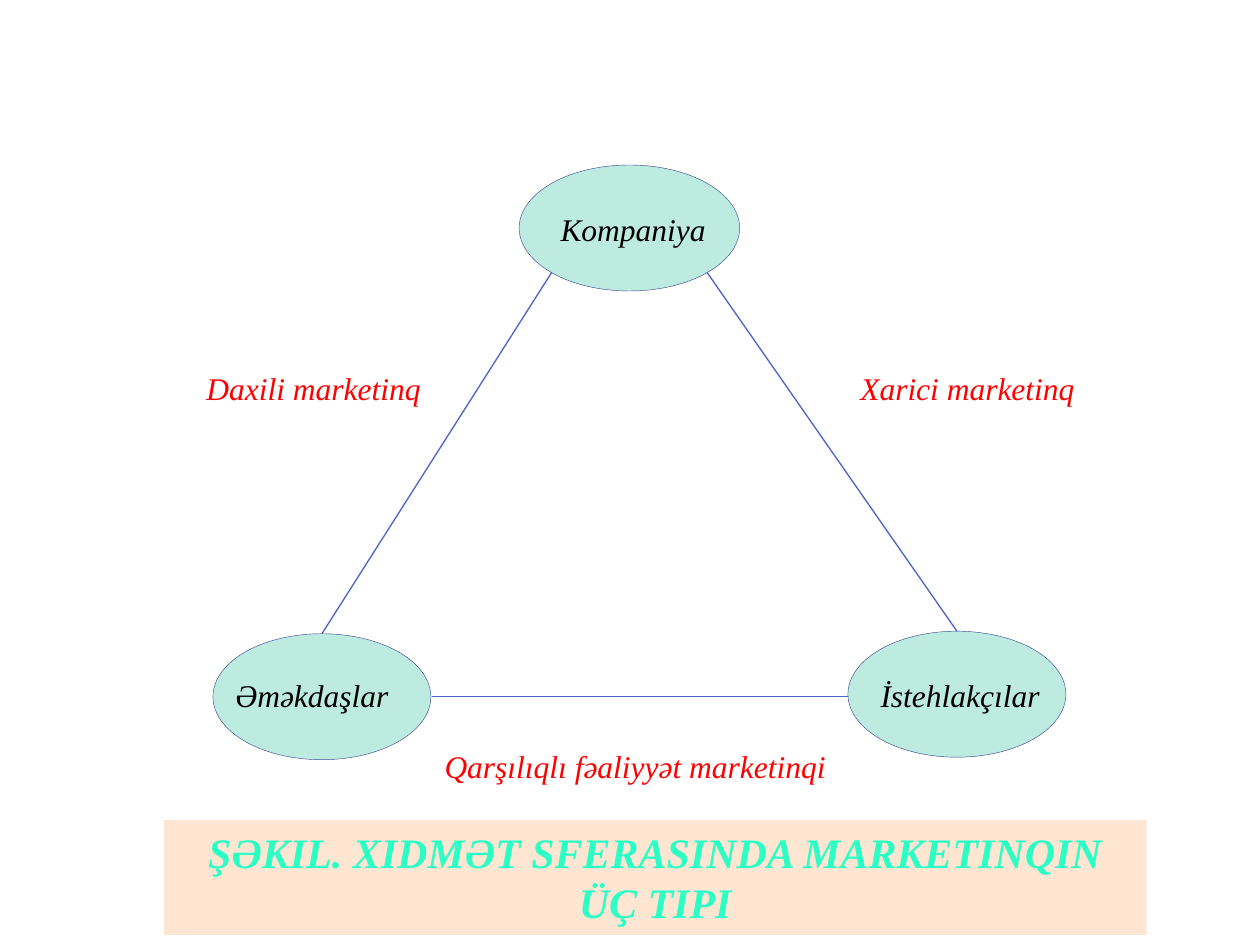
from dataclasses import dataclass
from lxml.etree import SubElement
from pptx import Presentation
from pptx.dml.color import RGBColor
from pptx.enum.shapes import MSO_CONNECTOR, MSO_SHAPE
from pptx.enum.text import MSO_ANCHOR, MSO_AUTO_SIZE, PP_ALIGN
from pptx.oxml.ns import qn
from pptx.slide import Slide
from pptx.util import Inches, Pt

COLORS = {
    "node": "BEEBDF",
    "outline": "3A4C94",
    "link": "4963C7",
    "name": "000000",
    "marketing": "FF0000",
    "band": "FFE6D3",
    "caption": "2CFFC5",
}


def rgb(key):
    return RGBColor.from_string(COLORS[key])


@dataclass
class Diagram:
    slide: Slide
    font: str = "Times New Roman"
    size: int = 18

    def shape(self, kind, box, fill):
        body = self.slide.shapes.add_shape(kind, *map(Inches, box))
        body.shadow.inherit = False
        body.fill.solid()
        body.fill.fore_color.rgb = rgb(fill)
        return body

    def node(self, box):
        ellipse = self.shape(MSO_SHAPE.OVAL, box, "node")
        ellipse.line.color.rgb = rgb("outline")
        ellipse.line.width = Pt(0.25)
        return ellipse

    def link(self, start, end, top_of=None):
        """Draw a line; top_of is the node whose top the line starts from."""
        line = self.slide.shapes.add_connector(
            MSO_CONNECTOR.STRAIGHT, *map(Inches, start + end))
        line.line.color.rgb = rgb("link")
        line.line.width = Pt(0.75)
        SubElement(line._element.spPr, qn("a:effectLst"))
        if top_of is not None:
            line.begin_connect(top_of, 0)

    def set_text(self, frame, text, color, size=None, bold=False):
        frame.word_wrap = True
        frame.auto_size = MSO_AUTO_SIZE.SHAPE_TO_FIT_TEXT
        run = frame.paragraphs[0].add_run()
        run.text = text
        run.font.name = self.font
        run.font.size = Pt(size or self.size)
        run.font.italic = True
        run.font.bold = bold
        run.font.color.rgb = rgb(color)

    def label(self, text, left, top, width, color):
        box = self.slide.shapes.add_textbox(
            Inches(left), Inches(top), Inches(width), Inches(0.4))
        self.set_text(box.text_frame, text, color)

    def caption(self, text, box):
        band = self.shape(MSO_SHAPE.RECTANGLE, box, "band")
        band.line.fill.background()
        frame = band.text_frame
        self.set_text(frame, text, "caption", size=24, bold=True)
        frame.vertical_anchor = MSO_ANCHOR.TOP
        frame.paragraphs[0].alignment = PP_ALIGN.CENTER


def main():
    deck = Presentation()
    deck.slide_width, deck.slide_height = Inches(10), Inches(7.5)
    diagram = Diagram(deck.slides.add_slide(deck.slide_layouts[6]))

    # Corners of the triangle
    diagram.node((4.12, 1.31, 1.75, 1))
    employees = diagram.node((1.69, 5.03, 1.73, 1))
    consumers = diagram.node((6.73, 5.01, 1.73, 1))

    # Sides of the triangle
    diagram.link((2.56, 5.03), (4.38, 2.16), top_of=employees)
    diagram.link((3.43, 5.53), (6.73, 5.53))
    diagram.link((7.6, 5.01), (5.61, 2.16), top_of=consumers)

    # Names of the parties, then the marketing type along each side
    for text, left, top, width, color in (
        ("Kompaniya", 4.35, 1.62, 1.52, "name"),
        ("Əməkdaşlar", 1.77, 5.32, 1.65, "name"),
        ("İstehlakçılar", 6.89, 5.32, 1.57, "name"),
        ("Daxili marketinq", 1.54, 2.88, 1.93, "marketing"),
        ("Xarici marketinq", 6.73, 2.88, 2.36, "marketing"),
        ("Qarşılıqlı fəaliyyət marketinqi", 3.43, 5.88, 3.46, "marketing"),
    ):
        diagram.label(text, left, top, width, color)

    # Caption band
    diagram.caption("ŞƏKIL. XIDMƏT SFERASINDA MARKETINQIN ÜÇ TIPI",
                    (1.3, 6.51, 7.8, 0.91))

    deck.save("out.pptx")


if __name__ == "__main__":
    main()
